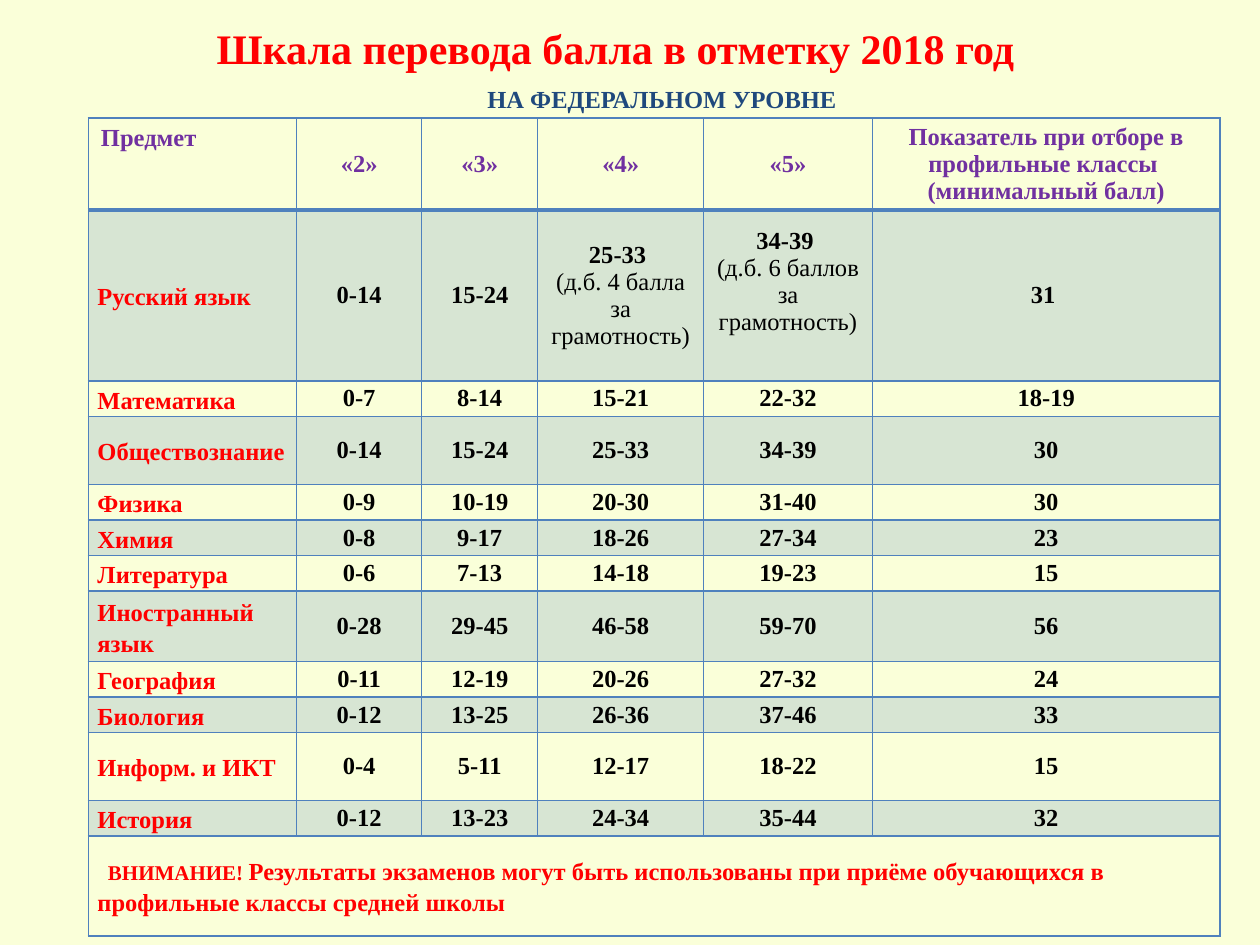
from lxml import etree
from pptx import Presentation
from pptx.dml.color import RGBColor
from pptx.enum import text
from pptx.oxml import ns
from pptx.util import Pt

COLORS = dict(bg="FAFFD9", red="FF0000", navy="1F497D", purple="7030A0",
              black="000000", blue="4F81BD")
FONT = "Times New Roman"
CENTER, LEFT = text.PP_ALIGN.CENTER, text.PP_ALIGN.LEFT
MIDDLE, TOP, BOTTOM = (text.MSO_ANCHOR.MIDDLE, text.MSO_ANCHOR.TOP,
                       text.MSO_ANCHOR.BOTTOM)

TITLE = "Шкала перевода балла в отметку 2018 год"
SUBTITLE = "НА ФЕДЕРАЛЬНОМ УРОВНЕ"
HEADER = ["Предмет", "«2»", "«3»", "«4»", "«5»",
          "Показатель при отборе в профильные классы \n(минимальный балл)"]
HEADER_HEIGHT, NOTE_HEIGHT = 52.6, 57
# Row height, subject, then the scores; a second line in a cell is a remark
SUBJECTS = [
    (97.7, "Русский язык", "0-14", "15-24",
     "25-33 \n(д.б. 4 балла за грамотность)",
     "34-39 \n(д.б. 6 баллов за грамотность)", "31 "),
    (20.3, "Математика", "0-7", "8-14", "15-21", "22-32", "18-19"),
    (38.9, "Обществознание", "0-14", "15-24", "25-33", "34-39", "30"),
    (20.3, "Физика", "0-9", "10-19", "20-30", "31-40", "30"),
    (20.3, "Химия", "0-8", "9-17", "18-26", "27-34", "23"),
    (20.3, "Литература", "0-6", "7-13", "14-18", "19-23", "15"),
    (40.3, "Иностранный язык", "0-28", "29-45", "46-58", "59-70", "56"),
    (20.3, "География", "0-11", "12-19", "20-26", "27-32", "24"),
    (20.3, "Биология", "0-12", "13-25", "26-36", "37-46", "33"),
    (38.9, "Информ. и ИКТ", "0-4", "5-11", "12-17", "18-22", "15"),
    (20.3, "История", "0-12", "13-23", "24-34", "35-44", "32"),
]
NOTE = [("ВНИМАНИЕ! ", 12),
        ("Результаты экзаменов могут быть использованы при приёме "
         "обучающихся в профильные классы средней школы", 14)]
COLUMN_WIDTHS = [119, 71.5, 66.3, 94.8, 96.5, 198.6]
TABLE_LEFT, TABLE_TOP = 50.5, 67.4


def rgb(name):
    return RGBColor.from_string(COLORS[name])


def set_attrs(obj, **values):
    for name, value in values.items():
        setattr(obj, name, value)


def add_run(p, words, size, color, bold=True):
    r = p.add_run()
    r.text = words
    set_attrs(r.font, name=FONT, size=Pt(size), bold=bold)
    r.font.color.rgb = rgb(color)


def add_label(slide, words, size, color, box, anchor):
    tf = slide.shapes.add_textbox(*map(Pt, box)).text_frame
    set_attrs(tf, word_wrap=True, vertical_anchor=anchor)
    p = tf.paragraphs[0]
    p.alignment = CENTER
    add_run(p, words, size, color)


def write_lines(cell, words, color, align, remark=False, **format_values):
    """Fill a cell, one paragraph a line; remark makes later lines plain."""
    for i, line in enumerate(words.split("\n")):
        tf = cell.text_frame
        p = tf.paragraphs[0] if i == 0 else tf.add_paragraph()
        set_attrs(p, alignment=align, **format_values)
        add_run(p, line, 14, color, bold=not (remark and i))


def set_insets(cell, side):
    set_attrs(cell, vertical_anchor=MIDDLE, margin_left=Pt(side),
              margin_right=Pt(side), margin_top=0, margin_bottom=0)


def set_borders(cell, **widths):
    tc_pr = cell._tc.get_or_add_tcPr()
    for side in "LRTB":
        ln = etree.SubElement(tc_pr, ns.qn(f"a:ln{side}"),
                              w=str(Pt(widths.get(side, 1))))
        fill = etree.SubElement(ln, ns.qn("a:solidFill"))
        etree.SubElement(fill, ns.qn("a:srgbClr"), val=COLORS["blue"])


def set_band(cell, shaded):
    if not shaded:
        cell.fill.background()
        return
    cell.fill.solid()
    cell.fill.fore_color.rgb = rgb("blue")
    clr = cell._tc.tcPr.find(".//" + ns.qn("a:solidFill") + "/"
                             + ns.qn("a:srgbClr") + "[last()]")
    fill = cell._tc.tcPr.findall(ns.qn("a:solidFill"))[-1]
    clr = fill.find(ns.qn("a:srgbClr"))
    etree.SubElement(clr, ns.qn("a:alpha"), val="20000")


def add_score_table(slide):
    heights = [HEADER_HEIGHT, *(s[0] for s in SUBJECTS), NOTE_HEIGHT]
    last = len(heights) - 1
    table = slide.shapes.add_table(
        len(heights), len(COLUMN_WIDTHS), Pt(TABLE_LEFT), Pt(TABLE_TOP),
        Pt(sum(COLUMN_WIDTHS)), Pt(sum(heights))).table
    set_attrs(table, first_row=False, horz_banding=False)
    for column, width in zip(table.columns, COLUMN_WIDTHS):
        column.width = Pt(width)
    for i, height in enumerate(heights):
        table.rows[i].height = Pt(height)
        for cell in table.rows[i].cells:
            set_borders(cell, **({"B": 2} if i == 0 else
                                 {"T": 2} if i == 1 else {}))
            set_band(cell, shaded=i % 2 == 1 and i < last)

    for j, words in enumerate(HEADER):
        cell = table.cell(0, j)
        if j:
            set_insets(cell, 3)
        else:
            cell.vertical_anchor = TOP
        write_lines(cell, words, "purple", CENTER if j else LEFT)

    for i, (_, subject, *scores) in enumerate(SUBJECTS, start=1):
        cell = table.cell(i, 0)
        set_insets(cell, 5.2)
        write_lines(cell, subject, "red", LEFT, line_spacing=1.15)
        for j, score in enumerate(scores, start=1):
            cell = table.cell(i, j)
            set_insets(cell, 3)
            write_lines(cell, score, "black", CENTER, remark=True)
    # The long remark under «5» sits one line higher than the row's middle
    table.cell(1, 4).margin_bottom = Pt(15.4)

    note = table.cell(last, 0)
    note.merge(table.cell(last, len(COLUMN_WIDTHS) - 1))
    set_insets(note, 5.2)
    p = note.text_frame.paragraphs[0]
    set_attrs(p, alignment=LEFT, line_spacing=1.15)
    p._p.get_or_add_pPr().set("indent", str(Pt(6)))
    for words, size in NOTE:
        add_run(p, words, size, "red")


def main():
    prs = Presentation()
    set_attrs(prs, slide_width=Pt(720), slide_height=Pt(540))
    s = prs.slides.add_slide(prs.slide_layouts[6])
    s.background.fill.solid()
    s.background.fill.fore_color.rgb = rgb("bg")
    add_label(s, TITLE, 24, "red", (33.8, 11.5, 635.8, 33.8), BOTTOM)
    add_label(s, SUBTITLE, 14, "navy", (224.6, 44.6, 307.4, 24.2), TOP)
    add_score_table(s)
    prs.save("out.pptx")


if __name__ == "__main__":
    main()
